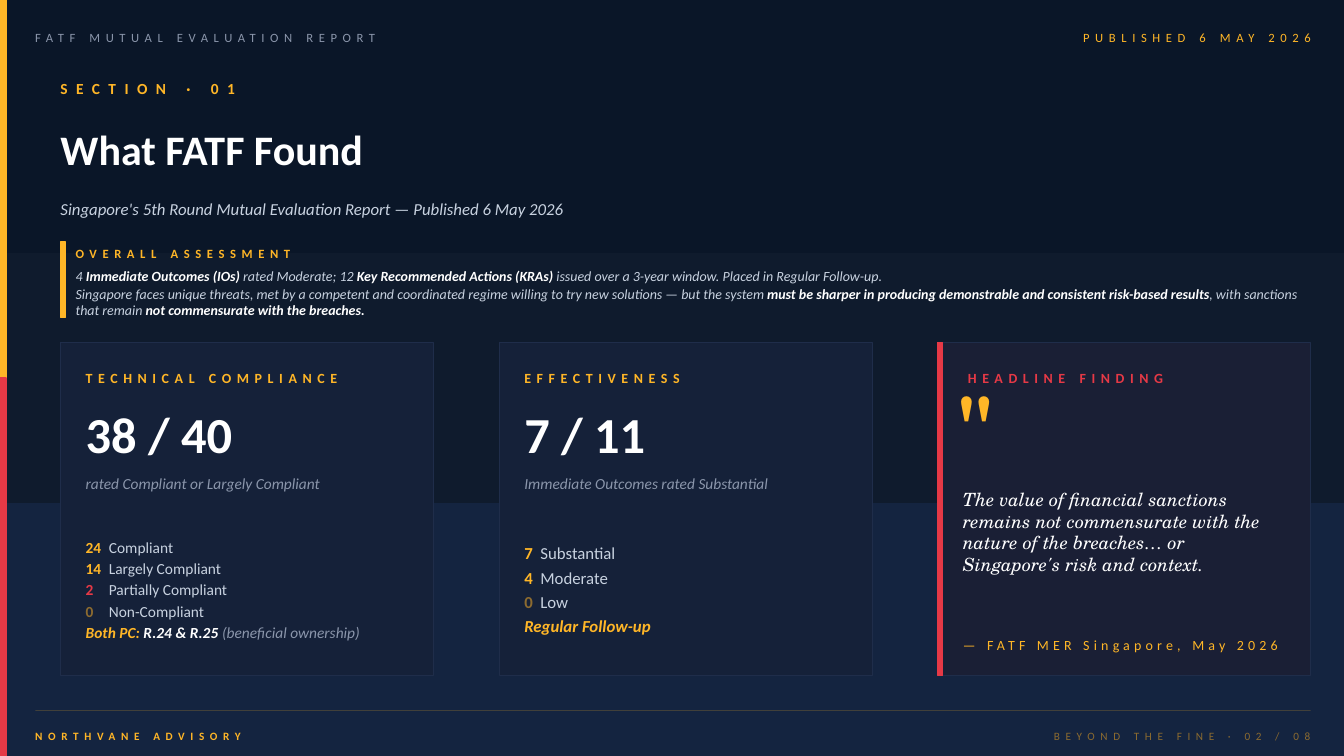
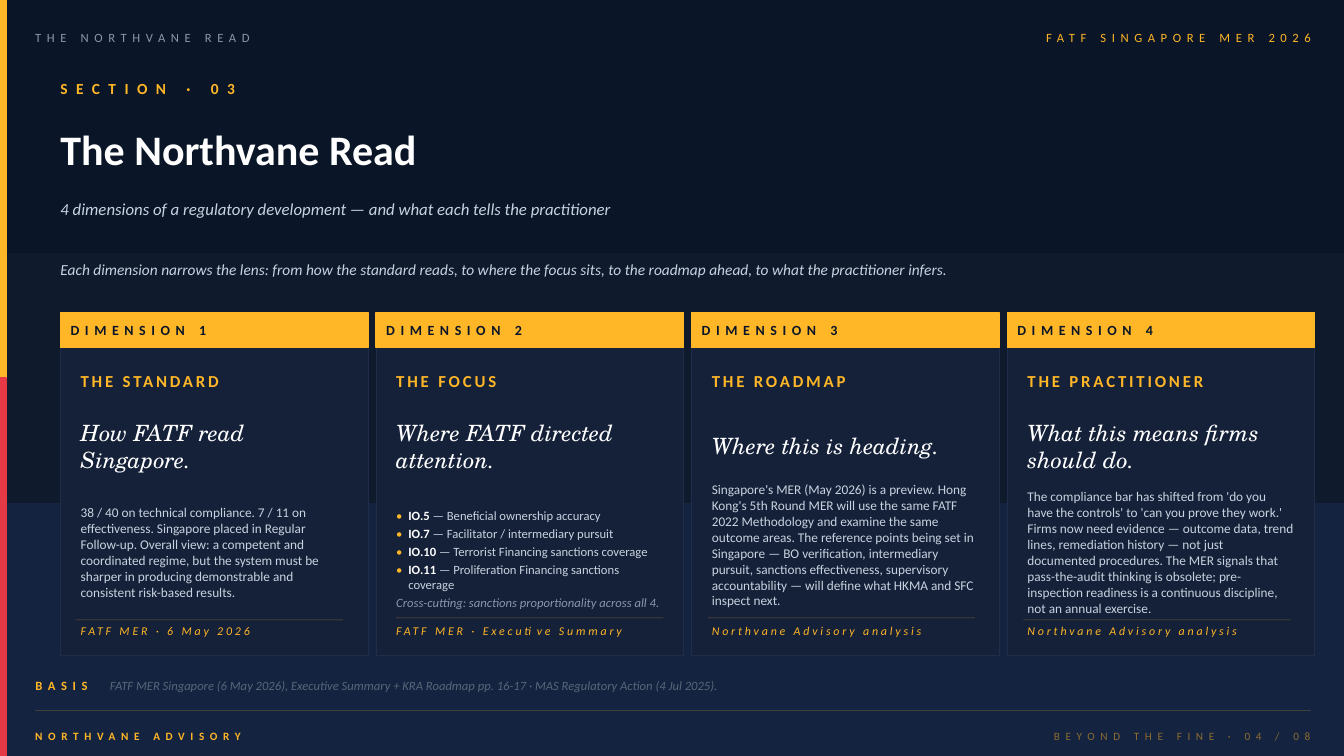
from lxml import etree
from pptx import Presentation
from pptx.dml.color import RGBColor
from pptx.enum.shapes import MSO_CONNECTOR, MSO_SHAPE
from pptx.enum.text import MSO_ANCHOR, PP_ALIGN
from pptx.oxml.ns import qn
from pptx.util import Pt

RECT = MSO_SHAPE.RECTANGLE
STRAIGHT = MSO_CONNECTOR.STRAIGHT
MIDDLE = MSO_ANCHOR.MIDDLE
LEFT, RIGHT = PP_ALIGN.LEFT, PP_ALIGN.RIGHT

PX = 9144
WIDE, HIGH = 1333, 750
SANS, SERIF = "Calibri", "TeX Gyre Schola"

BASE = RGBColor(0x0F, 0x1B, 0x2D)
NIGHT = RGBColor(0x0A, 0x16, 0x28)
NAVY = RGBColor(0x14, 0x24, 0x40)
PANEL = RGBColor(0x15, 0x21, 0x39)
PLUM = RGBColor(0x1A, 0x1F, 0x35)
EDGE = RGBColor(0x1F, 0x2D, 0x4A)
GOLD = RGBColor(0xFF, 0xB6, 0x27)
BRONZE = RGBColor(0x8C, 0x6B, 0x30)
RED = RGBColor(0xE6, 0x39, 0x46)
WHITE = RGBColor(0xFF, 0xFF, 0xFF)
PALE = RGBColor(0xC8, 0xD2, 0xE0)
GREY = RGBColor(0x8B, 0x96, 0xAB)
SLATE = RGBColor(0x58, 0x66, 0x79)

FIRM = "NORTHVANE ADVISORY"

FOUND = dict(
    left="FATF MUTUAL EVALUATION REPORT", right="PUBLISHED 6 MAY 2026",
    part="01", title="What FATF Found", page="02",
    lead="Singapore's 5th Round Mutual Evaluation Report — Published 6 May 2026")
READ = dict(
    left="THE NORTHVANE READ", right="FATF SINGAPORE MER 2026",
    part="03", title="The Northvane Read", page="04",
    lead="4 dimensions of a regulatory development — and what each tells the practitioner")

VERDICT = [
    (263, 22, ["4 ", ("Immediate Outcomes (IOs)", WHITE, "bi"),
               " rated Moderate; 12 ",
               ("Key Recommended Actions (KRAs)", WHITE, "bi"),
               " issued over a 3-year window. Placed in Regular Follow-up."]),
    (287, 25, ["Singapore faces unique threats, met by a competent and coordinated regime "
               "willing to try new solutions — but the system ",
               ("must be sharper in producing demonstrable and consistent "
                "risk-based results", WHITE, "bi"),
               ", with sanctions that remain ",
               ("not commensurate with the breaches.", WHITE, "bi")]),
]

SCORES = [
    dict(name="TECHNICAL COMPLIANCE", score="38 / 40",
         note="rated Compliant or Largely Compliant", size=11, after=2, tab=23,
         rows=[("24", GOLD, "Compliant"), ("14", GOLD, "Largely Compliant"),
               ("2", RED, "Partially Compliant"), ("0", BRONZE, "Non-Compliant")],
         end=[("Both PC: ", GOLD, "bi"), ("R.24 & R.25", WHITE, "bi"),
              (" (beneficial ownership)", GREY, "i")]),
    dict(name="EFFECTIVENESS", score="7 / 11",
         note="Immediate Outcomes rated Substantial", size=12, after=3, tab=16,
         rows=[("7", GOLD, "Substantial"), ("4", GOLD, "Moderate"),
               ("0", BRONZE, "Low")],
         end=[("Regular Follow-up", GOLD, "bi")]),
]
QUOTE = ("The value of financial sanctions remains not commensurate with the nature "
         "of the breaches… or Singapore's risk and context.")
CREDIT = "— FATF MER Singapore, May 2026"

INTRO = ("Each dimension narrows the lens: from how the standard reads, to where the "
         "focus sits, to the roadmap ahead, to what the practitioner infers.")
FOCUS = [("IO.5", "Beneficial ownership accuracy"),
         ("IO.7", "Facilitator / intermediary pursuit"),
         ("IO.10", "Terrorist Financing sanctions coverage"),
         ("IO.11", "Proliferation Financing sanctions coverage")]
CROSS = "Cross-cutting: sanctions proportionality across all 4."
LENSES = [
    dict(name="THE STANDARD", head="How FATF read Singapore.", top=495, rule=(15, 615),
         foot="FATF MER · 6 May 2026",
         body="38 / 40 on technical compliance. 7 / 11 on effectiveness. Singapore placed "
              "in Regular Follow-up. Overall view: a competent and coordinated regime, but "
              "the system must be sharper in producing demonstrable and consistent "
              "risk-based results."),
    dict(name="THE FOCUS", head="Where FATF directed attention.", top=495, rule=(20, 613),
         foot="FATF MER · Executive Summary", body=None),
    dict(name="THE ROADMAP", head="Where this is heading.", top=488, rule=(16, 613),
         foot="Northvane Advisory analysis",
         body="Singapore's MER (May 2026) is a preview. Hong Kong's 5th Round MER will use "
              "the same FATF 2022 Methodology and examine the same outcome areas. The "
              "reference points being set in Singapore — BO verification, intermediary "
              "pursuit, sanctions effectiveness, supervisory accountability — will define "
              "what HKMA and SFC inspect next."),
    dict(name="THE PRACTITIONER", head="What this means firms should do.", top=495,
         rule=(16, 615), foot="Northvane Advisory analysis",
         body="The compliance bar has shifted from 'do you have the controls' to 'can you "
              "prove they work.' Firms now need evidence — outcome data, trend lines, "
              "remediation history — not just documented procedures. The MER signals that "
              "pass-the-audit thinking is obsolete; pre-inspection readiness is a "
              "continuous discipline, not an annual exercise."),
]
BASIS = ("FATF MER Singapore (6 May 2026), Executive Summary + KRA Roadmap pp. 16-17 · "
         "MAS Regulatory Action (4 Jul 2025).")


def emu(*vals):
    return [v * PX for v in vals]


def block(page, x, y, w, h, fill, edge=None, width=1):
    box = page.shapes.add_shape(RECT, *emu(x, y, w, h))
    box.shadow.inherit = False
    box.fill.solid()
    box.fill.fore_color.rgb = fill
    box.line.color.rgb = edge or fill
    box.line.width = Pt(width)


def rule(page, x, y, w, width, alpha):
    line = page.shapes.add_connector(STRAIGHT, *emu(x, y, x + w, y))
    line.line.color.rgb = GOLD
    line.line.width = Pt(width)
    props = line._element.spPr
    tint = props.find(".//" + qn("a:srgbClr"))
    etree.SubElement(tint, qn("a:alpha")).set("val", str(alpha * 1000))
    etree.SubElement(props, qn("a:effectLst"))


def text(page, x, y, w, h, paras, size, color, style="", track=0,
         face=SANS, align=LEFT, after=0, tab=0, hang=0):
    box = page.shapes.add_textbox(*emu(x, y, w, h))
    frame = box.text_frame
    frame.word_wrap = True
    frame.vertical_anchor = MIDDLE
    frame.margin_left = frame.margin_right = 0
    frame.margin_top = frame.margin_bottom = 0
    if isinstance(paras, str):
        paras = [[paras]]
    for i, runs in enumerate(paras):
        para = frame.add_paragraph() if i else frame.paragraphs[0]
        props = para._p.get_or_add_pPr()
        if hang and len(runs) > 1:
            props.set("marL", str(hang * PX))
            props.set("indent", str(-hang * PX))
            tint = etree.SubElement(props, qn("a:buClr"))
            etree.SubElement(tint, qn("a:srgbClr")).set("val", str(GOLD))
            etree.SubElement(props, qn("a:buFont")).set("typeface", SANS)
            etree.SubElement(props, qn("a:buChar")).set("char", "•")
        if tab:
            stops = etree.SubElement(props, qn("a:tabLst"))
            stop = etree.SubElement(stops, qn("a:tab"))
            stop.set("pos", str(tab * PX))
            stop.set("algn", "l")
        para.alignment = align
        para.space_after = Pt(after)
        for part in runs:
            if isinstance(part, str):
                part = (part, color, style)
            words, hue, mode, *gap = part
            run = para.add_run()
            run.text = words
            font = run.font
            font.name, font.size = face, Pt(size)
            font.bold, font.italic = "b" in mode, "i" in mode
            font.color.rgb = hue
            gap = gap[0] if gap else track
            if gap:
                run._r.get_or_add_rPr().set("spc", str(gap * 100))


def frame(deck, info):
    page = deck.slides.add_slide(deck.slide_layouts[6])
    page.background.fill.solid()
    page.background.fill.fore_color.rgb = BASE
    half = HIGH // 2
    for x, y, w, h, fill in [(0, 0, WIDE, 250, NIGHT), (0, 500, WIDE, 250, NAVY),
                             (0, 0, 6, half, GOLD), (0, half, 6, half, RED)]:
        block(page, x, y, w, h, fill)
    text(page, 35, 22, 600, 30, info["left"], 9, GREY, track=4)
    text(page, 700, 22, 600, 30, info["right"], 9, GOLD, track=4, align=RIGHT)
    text(page, 60, 70, 400, 35, "SECTION · " + info["part"], 11, GOLD, "b", 6)
    text(page, 60, 105, 1220, 85, info["title"], 30, WHITE, "b")
    text(page, 60, 190, 1220, 35, info["lead"], 12, PALE, "i")
    rule(page, 35, 705, 1265, 0.5, 30)
    text(page, 35, 715, 600, 30, FIRM, 8, GOLD, "b", 4)
    text(page, 700, 715, 600, 30, f"BEYOND THE FINE · {info['page']} / 08",
         8, BRONZE, track=4, align=RIGHT)
    return page


def found(deck):
    page = frame(deck, FOUND)
    block(page, 60, 240, 5, 75, GOLD)
    text(page, 75, 240, 600, 22, "OVERALL ASSESSMENT", 9, GOLD, "b", 4)
    for y, h, runs in VERDICT:
        text(page, 75, y, 1225, h, [runs], 10, PALE, "i")

    top, wide, tall, step = 340, 370, 330, 435
    for i, card in enumerate(SCORES):
        x = 60 + i * step
        block(page, x, top, wide, tall, PANEL, EDGE, 0.5)
        x += 25
        text(page, x, 360, 320, 30, card["name"], 10, GOLD, "b", 4)
        text(page, x, 395, 320, 70, card["score"], 36, WHITE, "b")
        text(page, x, 465, 320, 30, card["note"], 11, GREY, "i")
        rows = [[(num + "\t", hue, "b"), label] for num, hue, label in card["rows"]]
        text(page, x, 505, 320, 160, rows + [card["end"]], card["size"], PALE,
             after=card["after"], tab=card["tab"])

    x = 60 + len(SCORES) * step
    block(page, x, top, wide, tall, PLUM, EDGE, 0.5)
    block(page, x, top, 5, tall, RED)
    text(page, x + 30, 360, 320, 30, "HEADLINE FINDING", 10, RED, "b", 4)
    x += 25
    text(page, x, 385, 60, 70, '"', 56, GOLD, "b", face=SERIF)
    text(page, x, 440, 320, 175, QUOTE, 13, WHITE, "i", face=SERIF)
    text(page, x, 625, 320, 30, CREDIT, 10, GOLD, track=3)


def read(deck):
    page = frame(deck, READ)
    text(page, 60, 240, 1220, 55, INTRO, 11, PALE, "i")
    for i, lens in enumerate(LENSES):
        x = 60 + i * 313
        block(page, x, 310, 305, 340, PANEL, EDGE, 0.5)
        block(page, x, 310, 305, 35, GOLD)
        text(page, x + 10, 310, 285, 35, f"DIMENSION {i + 1}", 10, NIGHT, "b", 4)
        left, wide = x + 20, 265
        text(page, left, 360, wide, 35, lens["name"], 12, GOLD, "b", 2)
        text(page, left, 400, wide, 85, lens["head"], 16, WHITE, "i", face=SERIF)
        if lens["body"]:
            text(page, left, lens["top"], wide, 105, lens["body"], 9.5, PALE, after=3)
        else:
            rows = [[(code + " ", WHITE, "b"), "— " + words] for code, words in FOCUS]
            text(page, left, lens["top"], wide, 120, rows + [[(CROSS, GREY, "i")]],
                 9, PALE, after=2, hang=12)
        dx, y = lens["rule"]
        rule(page, x + dx, y, wide, 0.4, 40)
        text(page, left, 608, wide, 35, lens["foot"], 8.5, GOLD, "i", 2)
    text(page, 35, 665, 1265, 30, [[("BASIS\t", GOLD, "b", 4), BASIS]],
         9, SLATE, "i", tab=74)


def main():
    deck = Presentation()
    deck.slide_width, deck.slide_height = emu(WIDE, HIGH)
    found(deck)
    read(deck)
    deck.save("out.pptx")


if __name__ == "__main__":
    main()
